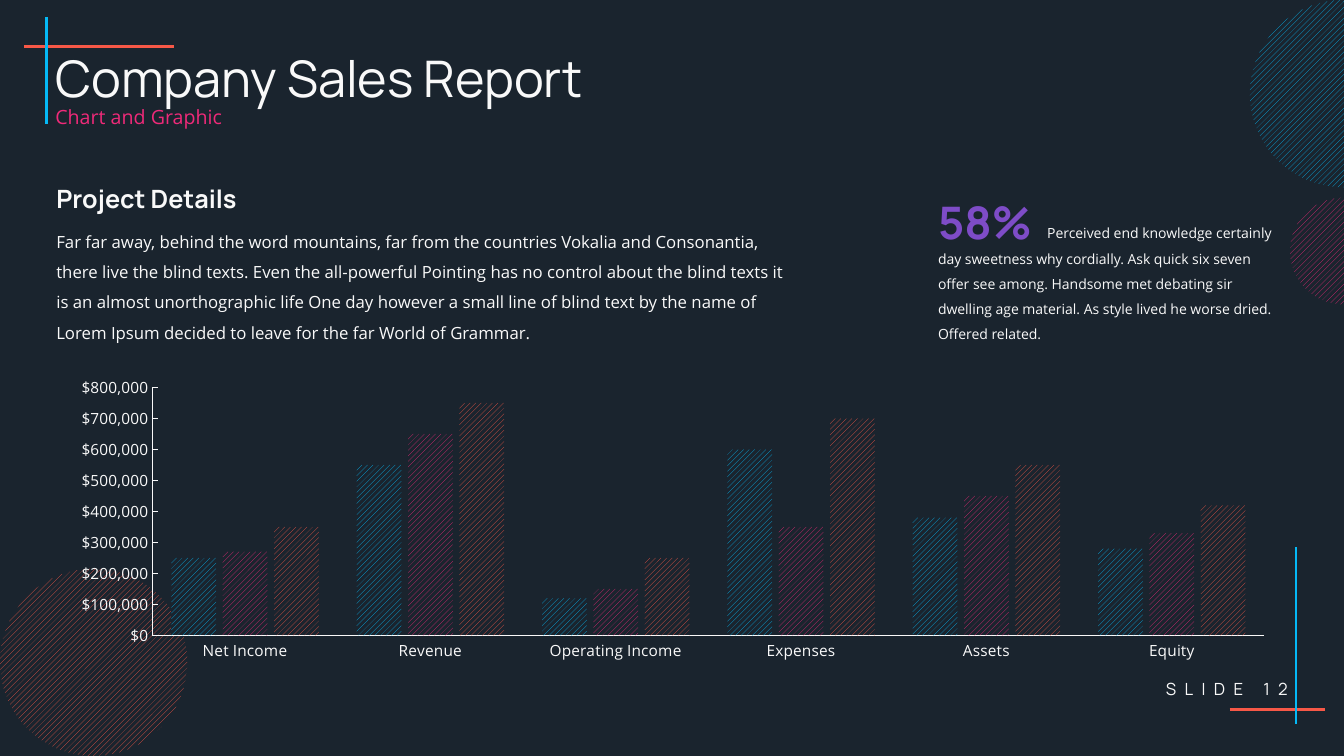
from lxml import etree
from pptx import Presentation
from pptx.chart.data import CategoryChartData
from pptx.dml.color import RGBColor
from pptx.enum.chart import XL_CHART_TYPE, XL_TICK_MARK
from pptx.enum.dml import MSO_PATTERN
from pptx.enum.shapes import MSO_CONNECTOR, MSO_SHAPE
from pptx.enum.text import MSO_ANCHOR, MSO_AUTO_SIZE, PP_ALIGN
from pptx.oxml.ns import qn
from pptx.util import Cm, Pt

COLUMNS = XL_CHART_TYPE.COLUMN_CLUSTERED
TICK_NONE, TICK_INSIDE = XL_TICK_MARK.NONE, XL_TICK_MARK.INSIDE
STRIPES = MSO_PATTERN.WIDE_UPWARD_DIAGONAL
STRAIGHT, OVAL = MSO_CONNECTOR.STRAIGHT, MSO_SHAPE.OVAL
TOP, MIDDLE = MSO_ANCHOR.TOP, MSO_ANCHOR.MIDDLE
LEFT, RIGHT = PP_ALIGN.LEFT, PP_ALIGN.RIGHT

NAVY, WHITE = "1A242E", "F9F9F9"
BLUE, PINK, CORAL, PURPLE = "05B9F6", "EF2A79", "F75847", "7E4CC7"
HEADING_FONT, BODY_FONT, CHART_FONT = "Manrope", "Open Sans", "Lato"


def rgb(color):
    return RGBColor.from_string(color)


def set_attributes(target, values):
    for name, value in values.items():
        setattr(target, name, value)


class ReportSlide:
    """Holds the style and the slide being built."""

    def __init__(self, presentation):
        self.slide = presentation.slides.add_slide(presentation.slide_layouts[1])
        self.shapes = self.slide.shapes
        background = self.slide.background.fill
        background.solid()
        background.fore_color.rgb = rgb(NAVY)

    def style_font(self, font, size, color=WHITE, name=BODY_FONT, bold=False):
        set_attributes(font, {"size": Pt(size), "name": name, "bold": bold})
        font.color.rgb = rgb(color)

    def stripe(self, fill, color):
        fill.patterned()
        fill.pattern = STRIPES
        fill.fore_color.rgb = rgb(color)
        fill.back_color.rgb = rgb(NAVY)

    def line(self, start, end, color):
        x1, y1, x2, y2 = (Cm(value) for value in (*start, *end))
        connector = self.shapes.add_connector(STRAIGHT, x1, y1, x2, y2)
        connector.line.width = Pt(2)
        connector.line.color.rgb = rgb(color)
        etree.SubElement(connector._element.spPr, qn("a:effectLst"))

    def circle(self, left, top, diameter, color):
        shape = self.shapes.add_shape(
            OVAL, Cm(left), Cm(top), Cm(diameter), Cm(diameter))
        shape.shadow.inherit = False
        shape.line.fill.background()
        self.stripe(shape.fill, color)

    def fill_text(self, shape, text, anchor, paragraph_format, font, indent=0):
        frame = shape.text_frame
        set_attributes(frame, {"word_wrap": True, "vertical_anchor": anchor,
                               "auto_size": MSO_AUTO_SIZE.NONE})
        paragraph = frame.paragraphs[0]
        set_attributes(paragraph, {"alignment": LEFT, **paragraph_format})
        properties = paragraph._p.get_or_add_pPr()
        properties.set("marL", "0")
        properties.set("indent", str(int(Cm(indent))))
        run = paragraph.add_run()
        run.text = text
        self.style_font(run.font, **font)
        return run

    def text(self, box, text, font, anchor=TOP, indent=0, **paragraph_format):
        shape = self.shapes.add_textbox(*(Cm(value) for value in box))
        return self.fill_text(shape, text, anchor, paragraph_format, font, indent)

    def placeholder(self, index, box, text, font):
        shape = self.slide.placeholders[index]
        names = ("left", "top", "width", "height")
        set_attributes(shape, dict(zip(names, map(Cm, box))))
        spacing = {"line_spacing": 0.9, "space_before": Pt(10)}
        run = self.fill_text(shape, text, MIDDLE, spacing, font)
        properties = run._r.getparent().get_or_add_pPr()
        etree.SubElement(properties, qn("a:buNone"))

    def axis(self, axis, tick):
        set_attributes(axis, {"major_tick_mark": tick, "minor_tick_mark": TICK_NONE,
                              "has_major_gridlines": False})
        self.style_font(axis.tick_labels.font, 11)
        axis.format.line.width = Pt(0.75)
        axis.format.line.color.rgb = rgb(WHITE)

    def column_chart(self, box, categories, series, plot_box):
        data = CategoryChartData()
        data.categories = categories
        for name, values, _ in series:
            data.add_series(name, values)
        frame = self.shapes.add_chart(COLUMNS, *(Cm(value) for value in box), data)
        chart = frame.chart
        set_attributes(chart, {"has_legend": False, "has_title": False})
        self.style_font(chart.font, 8, PINK, CHART_FONT)
        plot = chart.plots[0]
        set_attributes(plot, {"gap_width": 85, "overlap": -15,
                              "vary_by_categories": False})
        for column, (_, _, color) in zip(plot.series, series):
            self.stripe(column.format.fill, color)
        self.axis(chart.category_axis, TICK_NONE)
        self.axis(chart.value_axis, TICK_INSIDE)
        set_attributes(chart.value_axis, {
            "minimum_scale": 0, "maximum_scale": 800000, "major_unit": 100000})
        set_attributes(chart.value_axis.tick_labels, {
            "number_format": '"$"#,##0', "number_format_is_linked": False})
        self.place_plot(chart, plot_box)

    def place_plot(self, chart, plot_box):
        # Fixed inner plot area, as shares of the chart frame
        plot_area = chart._chartSpace.find(".//" + qn("c:plotArea"))
        for layout in plot_area.findall(qn("c:layout")):
            plot_area.remove(layout)
        layout = etree.Element(qn("c:layout"))
        plot_area.insert(0, layout)
        manual = etree.SubElement(layout, qn("c:manualLayout"))
        settings = {"layoutTarget": "inner", "xMode": "edge", "yMode": "edge",
                    **dict(zip("xywh", plot_box))}
        for name, value in settings.items():
            etree.SubElement(manual, qn("c:" + name)).set("val", str(value))


def main():
    presentation = Presentation()
    set_attributes(presentation, {"slide_width": Cm(33.87), "slide_height": Cm(19.05)})
    report = ReportSlide(presentation)

    # Corner lines and striped circles
    report.line((4.39, 1.17), (0.61, 1.17), CORAL)
    report.line((1.17, 3.12), (1.17, 0.43), BLUE)
    report.line((30.99, 17.88), (33.38, 17.88), CORAL)
    report.line((32.66, 13.79), (32.66, 18.24), BLUE)
    report.circle(0, 14.33, 4.72, CORAL)
    report.circle(32.51, 4.98, 2.69, PINK)
    report.circle(31.5, 0, 4.72, BLUE)

    # Slide number
    number = report.text((27.43, 16.84, 5.28, 1.04), "SLIDE 12",
                         {"size": 12, "name": HEADING_FONT}, MIDDLE, alignment=RIGHT)
    number._r.get_or_add_rPr().set("spc", "600")

    # Title and subtitle
    report.placeholder(1, (1.14, 2.16, 31.57, 1.63), "Chart and Graphic",
                       {"size": 14, "color": PINK})
    report.placeholder(0, (1.14, 1.24, 31.57, 1.63), "Company Sales Report",
                       {"size": 36, "name": HEADING_FONT})

    # Sales chart
    report.column_chart(
        (1.35, 9.32, 31.14, 7.44),
        ("Net Income", "Revenue", "Operating Income", "Expenses", "Assets", "Equity"),
        (("Series 1", (250000, 550000, 120000, 600000, 380000, 280000), BLUE),
         ("Series 2", (270000, 650000, 150000, 350000, 450000, 330000), PINK),
         ("Series 3", (350000, 750000, 250000, 700000, 550000, 420000), CORAL)),
        (0.08, 0.06, 0.9, 0.84))

    # Key figure, its text flowing around the number
    report.text((23.39, 4.8, 3.1, 1.55), "58%",
                {"size": 32, "color": PURPLE, "name": HEADING_FONT, "bold": True}, MIDDLE)
    report.text((23.39, 5.33, 9.09, 3.45),
                "Perceived end knowledge certainly day sweetness why cordially. Ask quick "
                "six seven offer see among. Handsome met debating sir dwelling age "
                "material. As style lived he worse dried. Offered related.",
                {"size": 10}, indent=2.75, line_spacing=1.5)

    # Project details
    report.text((1.17, 4.27, 15.32, 1.19), "Project Details",
                {"size": 18, "name": HEADING_FONT, "bold": True}, line_spacing=1.3)
    report.text((1.17, 5.46, 18.92, 3.33),
                "Far far away, behind the word mountains, far from the countries Vokalia "
                "and Consonantia, there live the blind texts. Even the all-powerful "
                "Pointing has no control about the blind texts it is an almost "
                "unorthographic life One day however a small line of blind text by the "
                "name of Lorem Ipsum decided to leave for the far World of Grammar.",
                {"size": 12}, line_spacing=1.5)

    presentation.save("out.pptx")


if __name__ == "__main__":
    main()
